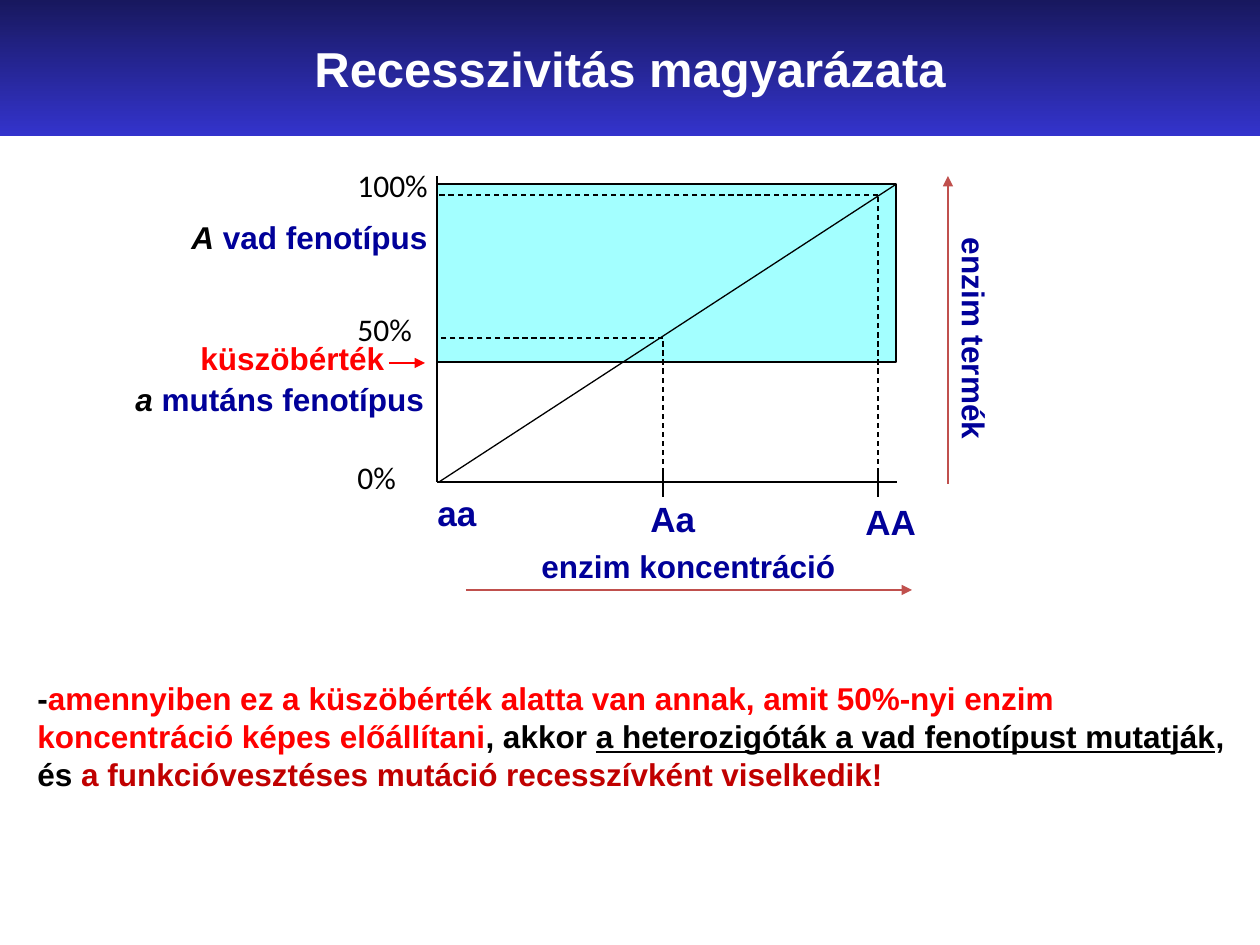
from lxml import etree
from pptx import Presentation
from pptx.dml.color import RGBColor
from pptx.enum.dml import MSO_LINE_DASH_STYLE as Dash
from pptx.enum.shapes import MSO_CONNECTOR as Link, MSO_SHAPE as Kind
from pptx.enum.text import MSO_ANCHOR as Anchor, MSO_AUTO_SIZE as Auto, PP_ALIGN as Align
from pptx.oxml.ns import qn
from pptx.util import Pt

SCALE = 914400 / 126
BLACK, WHITE, RED, BLUE = "000000", "FFFFFF", "FF0000", "000099"
DARK_RED, ROSE, CYAN = "C00000", "C0504D", "A3FFFF"


def px(n):
    return round(n * SCALE)


def rgb(code):
    return RGBColor.from_string(code)


def add_runs(para, runs, size, face="Arial", bold=True):
    """Each run is (text, colour) plus an optional 'i' or 'u' mark."""
    for text, color, *marks in runs:
        run = para.add_run()
        run.text = text
        font = run.font
        font.name, font.size, font.bold = face, Pt(size), bold
        font.italic, font.underline = "i" in marks, "u" in marks
        font.color.rgb = rgb(color)


def add_text(slide, box, runs, size=18, face="Arial", bold=True, wrap=False, turn=0):
    shape = slide.shapes.add_textbox(*map(px, box))
    shape.rotation = turn
    frame = shape.text_frame
    frame.word_wrap = wrap
    frame.auto_size = Auto.SHAPE_TO_FIT_TEXT
    add_runs(frame.paragraphs[0], runs, size, face, bold)


def add_rect(slide, box):
    shape = slide.shapes.add_shape(Kind.RECTANGLE, *map(px, box))
    shape.shadow.inherit = False
    return shape


def add_line(slide, ends, color=BLACK, dash=False, arrow=False):
    line = slide.shapes.add_connector(Link.STRAIGHT, *map(px, ends))
    line.line.color.rgb = rgb(color)
    line.line.width = Pt(0.75)
    if dash:
        line.line.dash_style = Dash.DASH
    props = line.element.spPr
    if arrow:
        etree.SubElement(props.find(qn("a:ln")), qn("a:tailEnd"), type="triangle")
    etree.SubElement(props, qn("a:effectLst"))


def title_bar(slide, box):
    bar = add_rect(slide, box)
    bar.line.fill.background()
    bar.fill.gradient()
    bar.fill.gradient_angle = 270
    for stop, color in zip(bar.fill.gradient_stops, ("18185E", "3333CC")):
        stop.color.rgb = rgb(color)
    frame = bar.text_frame
    frame.word_wrap = True
    frame.vertical_anchor = Anchor.MIDDLE
    para = frame.paragraphs[0]
    para.alignment = Align.CENTER
    add_runs(para, [("Recesszivitás magyarázata", WHITE)], 28)


def diagram(slide, box):
    """Enzyme product against enzyme concentration, with axes along the box."""
    left, top, wide, high = box

    def line(x1, y1, x2, y2, **look):
        add_line(slide, (left + x1, top + y1, left + x2, top + y2), **look)

    def label(x, y, w, h, runs, **look):
        add_text(slide, (left + x, top + y, w, h), runs, **look)

    band = add_rect(slide, (left, top + 8, 459, 178))
    band.fill.solid()
    band.fill.fore_color.rgb = rgb(CYAN)
    band.line.color.rgb = rgb(BLACK)
    band.line.width = Pt(0.75)

    line(0, 0, 0, high)
    line(0, high, wide, high)
    line(2, high, wide - 2, 9)
    for x, y in ((226, 162), (441, 19)):
        line(x, high - 10, x, high + 15)
        line(x, high, x, y, dash=True)
        line(x, y, 2, y, dash=True)

    line(-48, 187, -12, 187, color=RED, arrow=True)
    line(29, 414, 475, 414, color=ROSE, arrow=True)
    line(511, 308, 511, 0, color=ROSE, arrow=True)

    for text, y, w in (("100%", -16, 97), ("50%", 128, 81), ("0%", 276, 64)):
        label(-92, y, w, 50, [(text, BLACK)], face="Calibri", bold=False)
    for text, x, y, w in (("aa", -12, 309, 64), ("Aa", 201, 315, 71), ("AA", 416, 318, 76)):
        label(x, y, w, 54, [(text, BLUE)], size=20)
    label(-258, 36, 263, 50, [("A", BLACK, "i"), (" vad fenotípus", BLUE)])
    label(-249, 157, 209, 50, [("küszöbérték", RED)])
    label(-314, 198, 321, 50, [("a", BLACK, "i"), (" mutáns fenotípus", BLUE)])
    label(92, 365, 319, 50, [("enzim koncentráció", BLUE)])
    label(424, 138, 227, 50, [("enzim termék", BLUE)], turn=90)


def summary(slide, box):
    add_text(slide, box, [
        ("-", BLACK),
        ("amennyiben ez a küszöbérték alatta van annak, amit 50%-nyi enzim "
         "koncentráció képes előállítani", RED),
        (", akkor ", BLACK),
        ("a heterozigóták a vad fenotípust mutatják", BLACK, "u"),
        (", és ", BLACK),
        ("a funkcióvesztéses mutáció recesszívként viselkedik!", DARK_RED),
    ], wrap=True)


def main():
    deck = Presentation()
    deck.slide_width, deck.slide_height = px(1260), px(945)
    slide = deck.slides.add_slide(deck.slide_layouts[6])
    diagram(slide, (437, 176, 460, 306))
    summary(slide, (25, 673, 1218, 127))
    title_bar(slide, (0, 0, 1260, 136))
    deck.save("out.pptx")


if __name__ == "__main__":
    main()
